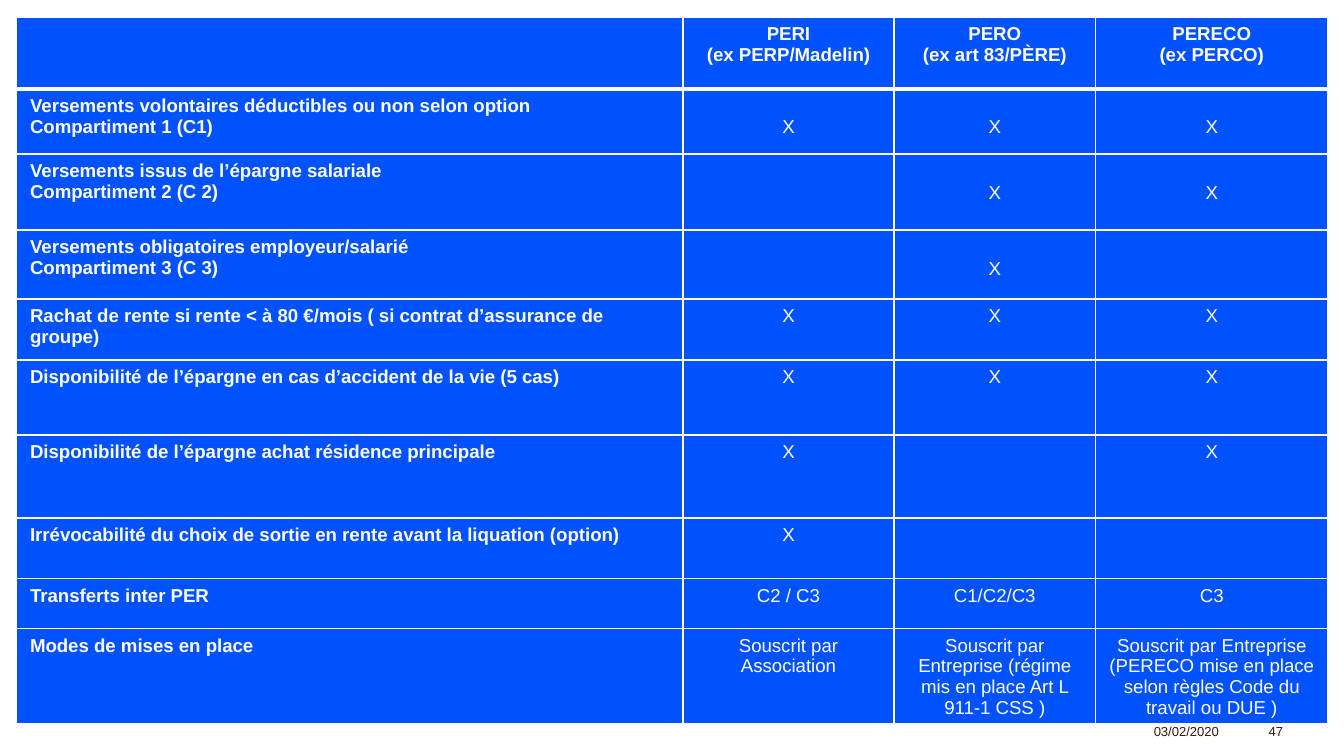
from lxml import etree
from pptx import Presentation
from pptx.dml.color import RGBColor
from pptx.enum import text
from pptx.oxml import ns
from pptx.util import Pt

BLUE = RGBColor(0x00, 0x52, 0xFF)
WHITE = RGBColor(0xFF, 0xFF, 0xFF)
BROWN = RGBColor(0x39, 0x19, 0x09)
MID, RIGHT = text.PP_ALIGN.CENTER, text.PP_ALIGN.RIGHT

widths = [357, 113, 108, 124.5]
heights = [38.6, 35, 40.7, 37, 32.7, 39.9, 44.7, 32.4, 26.8, 51]
rows = [
    ["", "PERI\n(ex PERP/Madelin)", "PERO\n(ex art 83/PÈRE)", "PERECO\n(ex PERCO)"],
    ["Versements volontaires déductibles ou non selon option\nCompartiment 1 (C1)", "X", "X", "X"],
    ["Versements issus de l’épargne salariale\nCompartiment 2 (C 2)", "", "X", "X"],
    ["Versements obligatoires employeur/salarié\nCompartiment 3 (C 3)", "", "X", ""],
    ["Rachat de rente si rente < à 80 €/mois ( si contrat d’assurance de groupe)", "X", "X", "X"],
    ["Disponibilité de l’épargne en cas d’accident de la vie (5 cas)", "X", "X", "X"],
    ["Disponibilité de l’épargne achat résidence principale", "X", "", "X"],
    ["Irrévocabilité du choix de sortie en rente avant la liquation (option)", "X", "", ""],
    ["Transferts inter PER", "C2 / C3", "C1/C2/C3", "C3"],
    ["Modes de mises en place", "Souscrit par Association",
     "Souscrit par Entreprise (régime mis en place Art L 911-1 CSS )",
     "Souscrit par Entreprise (PERECO mise en place selon règles Code du travail ou DUE )"],
]
last = len(rows) - 1


def style(para, size, color, bold=False, align=None):
    para.alignment = align
    font = para.font
    font.name, font.size, font.bold = "Arial", Pt(size), bold
    font.color.rgb = color


def edge(cell, side, width):
    """Draw a white border on one side (L, R, T or B) of a cell."""
    props = cell._tc.get_or_add_tcPr()
    line = etree.SubElement(props, ns.qn("a:ln" + side), w=str(Pt(width)))
    fill = etree.SubElement(line, ns.qn("a:solidFill"))
    etree.SubElement(fill, ns.qn("a:srgbClr"), val=str(WHITE))


prs = Presentation()
prs.slide_width, prs.slide_height = Pt(720), Pt(405)
slide = prs.slides.add_slide(prs.slide_layouts[6])

table = slide.shapes.add_table(len(rows), len(widths), Pt(8.9), Pt(9.1),
                               Pt(sum(widths)), Pt(sum(heights))).table
table.first_row = table.horz_banding = False
for col, width in zip(table.columns, widths):
    col.width = Pt(width)
for row, height in zip(table.rows, heights):
    row.height = Pt(height)

for r, row in enumerate(rows):
    for c, words in enumerate(row):
        cell = table.cell(r, c)
        for side in "LRTB":
            thick = (r, side) in [(0, "B"), (1, "T")]
            edge(cell, side, 3 if thick else 1)
        cell.fill.solid()
        cell.fill.fore_color.rgb = BLUE
        # Marks of the three compartments sit level with the second label line
        if c and 1 <= r <= 3:
            cell.margin_top = Pt(15.1)
        # Four lines must fit above the footer
        if r == last:
            cell.margin_bottom = Pt(0)
        cell.text = words
        for para in cell.text_frame.paragraphs:
            style(para, 10, WHITE, bold=r == 0 or c == 0, align=MID if c else None)

for label, left, width in [("03/02/2020", 609, 51), ("47", 664.5, 30)]:
    box = slide.shapes.add_textbox(Pt(left), Pt(383.8), Pt(width), Pt(21.6))
    box.text_frame.word_wrap = True
    para = box.text_frame.paragraphs[0]
    para.text = label
    style(para, 7, BROWN, align=RIGHT)

prs.save("out.pptx")
